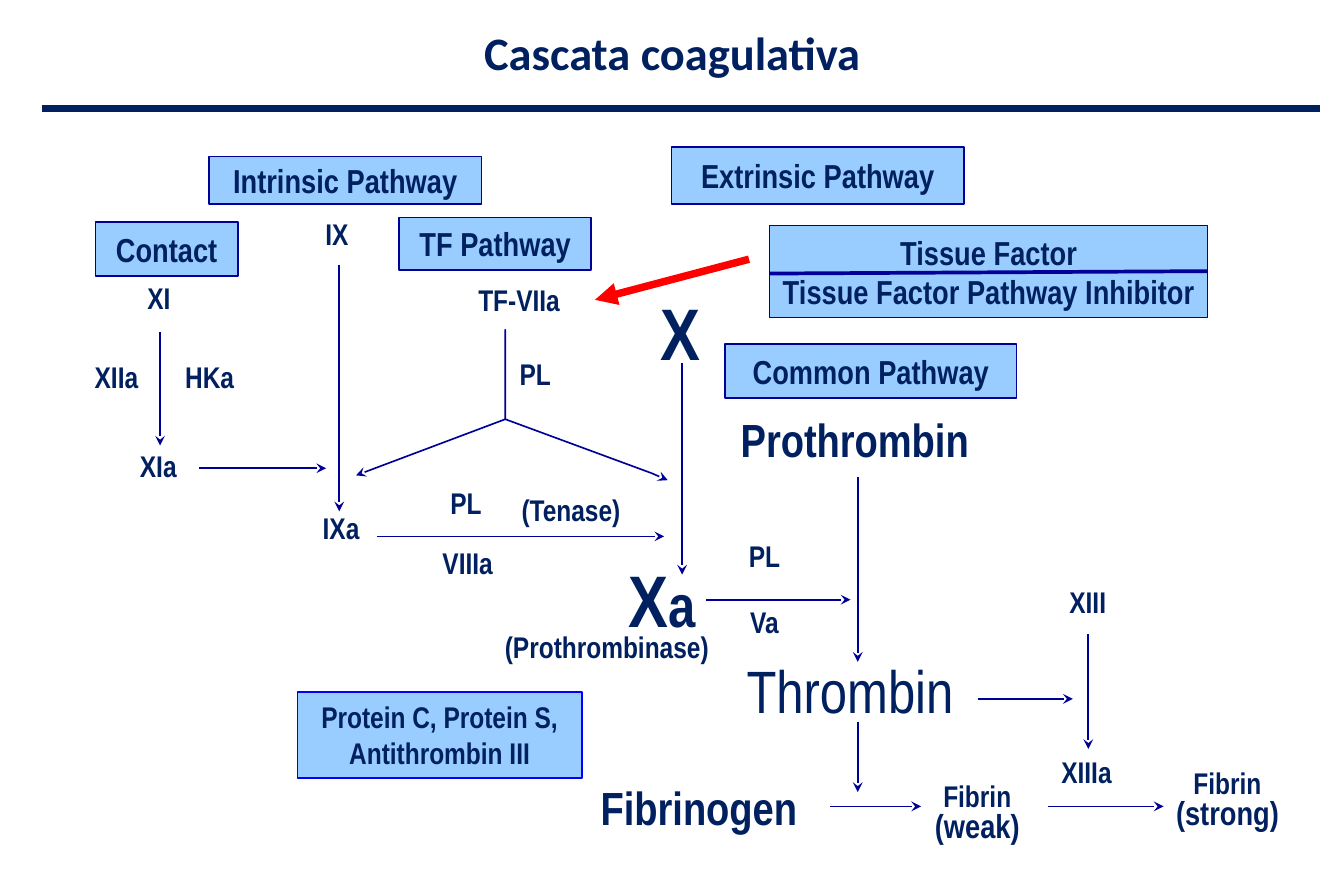
from lxml import etree
from pptx import Presentation
from pptx.dml.color import RGBColor
from pptx.enum.shapes import MSO_CONNECTOR as CONNECTOR, MSO_SHAPE as SHAPE
from pptx.enum.text import MSO_ANCHOR as ANCHOR, PP_ALIGN as ALIGN
from pptx.oxml.ns import qn
from pptx.util import Inches, Pt

COLORS = {"navy": "002060", "blue": "000099", "bright": "0000FF",
          "sky": "99CCFF", "red": "FF0000"}


def write(shape, text, size, bold=True, font="Arial Narrow",
          anchor=ANCHOR.TOP, wrap=False, spacing=None):
    frame = shape.text_frame
    frame.text = text
    frame.word_wrap = wrap
    frame.vertical_anchor = anchor
    for paragraph in frame.paragraphs:
        paragraph.alignment = ALIGN.CENTER
        paragraph.line_spacing = spacing
        for run in paragraph.runs:
            run.font.name = font
            run.font.size = Pt(size)
            run.font.bold = bold
            run.font.color.rgb = RGBColor.from_string(COLORS["navy"])
    return frame


def draw_line(shape, color, width, **ends):
    shape.line.color.rgb = RGBColor.from_string(COLORS[color])
    shape.line.width = Pt(width)
    properties = shape._element.spPr
    for end, kind in ends.items():
        etree.SubElement(shape.line._get_or_add_ln(), qn(f"a:{end}"), type=kind)
    if properties.find(qn("a:effectLst")) is None:
        etree.SubElement(properties, qn("a:effectLst"))


deck = Presentation()
deck.slide_width = Inches(11.25)
deck.slide_height = Inches(7.5)
shapes = deck.slides.add_slide(deck.slide_layouts[6]).shapes

title = shapes.add_textbox(0, Inches(0.13), Inches(11.25), Inches(0.67))
write(title, "Cascata coagulativa", 28, font="Calibri",
      anchor=ANCHOR.MIDDLE, wrap=True, spacing=0.9)

reactions = [
    (1.67, 3.92, 2.73, 3.92),
    (5.71, 3.04, 5.71, 4.81),
    (5.91, 5.02, 7.12, 5.02),
    (9.11, 5.31, 9.11, 6.27),
    (8.19, 5.85, 8.98, 5.85),
    (8.77, 6.75, 9.74, 6.75),
    (2.84, 2.22, 2.84, 4.28),
    (6.95, 6.75, 7.71, 6.75),
    (7.18, 6.04, 7.18, 6.63),
    (7.18, 3.99, 7.18, 5.54),
    (1.34, 2.78, 1.34, 3.73),
    (3.16, 4.49, 5.56, 4.49),
]
for ends in reactions:
    reaction = shapes.add_connector(CONNECTOR.STRAIGHT, *map(Inches, ends))
    draw_line(reaction, "blue", 1, tailEnd="stealth")

fork_points = [(5.45, 3.96), (4.23, 3.51), (4.23, 2.76), (4.23, 3.51), (2.98, 3.98)]
builder = shapes.build_freeform(Inches(5.59), Inches(4.02))
builder.add_line_segments([(Inches(x), Inches(y)) for x, y in fork_points], close=False)
fork = builder.convert_to_shape()
fork.shadow.inherit = False
fork.fill.background()
draw_line(fork, "blue", 1, headEnd="stealth", tailEnd="stealth")

pathways = [
    ("Contact", 0.8, 1.86, 1.19, 0.45, 20, "blue", 1),
    ("Intrinsic Pathway", 1.75, 1.31, 2.28, 0.4, 20, "blue", 1),
    ("Extrinsic Pathway", 5.62, 1.23, 2.45, 0.48, 20, "blue", 1),
    ("Common Pathway", 6.07, 2.88, 2.44, 0.45, 20, "blue", 1),
    ("TF Pathway", 3.34, 1.82, 1.61, 0.44, 20, "blue", 1),
    ("Protein C, Protein S, Antithrombin III", 2.49, 5.79, 2.38, 0.72, 18, "bright", 1),
    ("Tissue Factor\nTissue Factor Pathway Inhibitor", 6.44, 1.89, 3.67, 0.77, 20, "blue", 0.75),
]
for text, left, top, width, height, size, outline, weight in pathways:
    pathway = shapes.add_shape(SHAPE.RECTANGLE, *map(Inches, (left, top, width, height)))
    pathway.shadow.inherit = False
    pathway.fill.solid()
    pathway.fill.fore_color.rgb = RGBColor.from_string(COLORS["sky"])
    draw_line(pathway, outline, weight)
    write(pathway, text, size, anchor=ANCHOR.MIDDLE, wrap=size == 18)

heights = {18: 0.4, 28: 0.57, 36: 0.7, 44: 0.84}
factors = [
    ("XIIIa", 8.78, 6.26, 0.63, 18),
    ("XIII", 8.85, 4.84, 0.51, 18),
    ("Thrombin", 6.14, 5.42, 1.95, 36),
    ("Fibrinogen", 4.92, 6.47, 1.86, 28),
    ("IX", 2.62, 1.76, 0.4, 18),
    ("XI", 1.13, 2.29, 0.4, 18),
    ("XIa", 1.07, 3.7, 0.51, 18),
    ("IXa", 2.6, 4.22, 0.51, 18),
    ("Va", 6.18, 5, 0.44, 18),
    ("XIIa", 0.69, 2.95, 0.57, 18),
    ("HKa", 1.45, 2.95, 0.61, 18),
    ("Prothrombin", 6.09, 3.39, 2.13, 28),
    ("TF-VIIa", 3.9, 2.31, 0.89, 18),
    ("(Prothrombinase)", 4.12, 5.21, 1.92, 18),
    ("PL", 4.25, 2.93, 0.46, 18),
    ("PL", 6.17, 4.45, 0.46, 18),
    ("PL", 3.67, 4.01, 0.46, 18),
    ("(Tenase)", 4.2, 4.07, 1.16, 18),
    ("VIIIa", 3.6, 4.51, 0.63, 18),
    ("X", 5.43, 2.36, 0.54, 44),
]
for text, left, top, width, size in factors:
    factor = shapes.add_textbox(*map(Inches, (left, top, width, heights[size])))
    write(factor, text, size, bold=text != "Thrombin")

for strength, left, top, width in [("(strong)", 9.74, 6.41, 1.07), ("(weak)", 7.72, 6.52, 0.92)]:
    fibrin = shapes.add_textbox(*map(Inches, (left, top, width, 0.61)))
    frame = write(fibrin, f"Fibrin\n{strength}", 18, spacing=0.8)
    frame.paragraphs[1].runs[0].font.size = Pt(20)

factor_xa = shapes.add_textbox(*map(Inches, (5.16, 4.59, 0.77, 0.84)))
letters = write(factor_xa, "X", 44).paragraphs[0]
active = letters.add_run()
active.text = "a"
active.font.name = "Arial Narrow"
active.font.size = Pt(36)
active.font.bold = True
active.font.color.rgb = RGBColor.from_string(COLORS["navy"])

accents = [
    ((6.44, 2.29, 10.11, 2.27), "blue", 2.25, {}),
    ((6.27, 2.17, 4.98, 2.51), "red", 4.5, {"tailEnd": "triangle"}),
    ((0.35, 0.91, 11.05, 0.91), "navy", 4.5, {}),
]
for ends, color, weight, heads in accents:
    accent = shapes.add_connector(CONNECTOR.STRAIGHT, *map(Inches, ends))
    draw_line(accent, color, weight, **heads)

deck.save("out.pptx")
